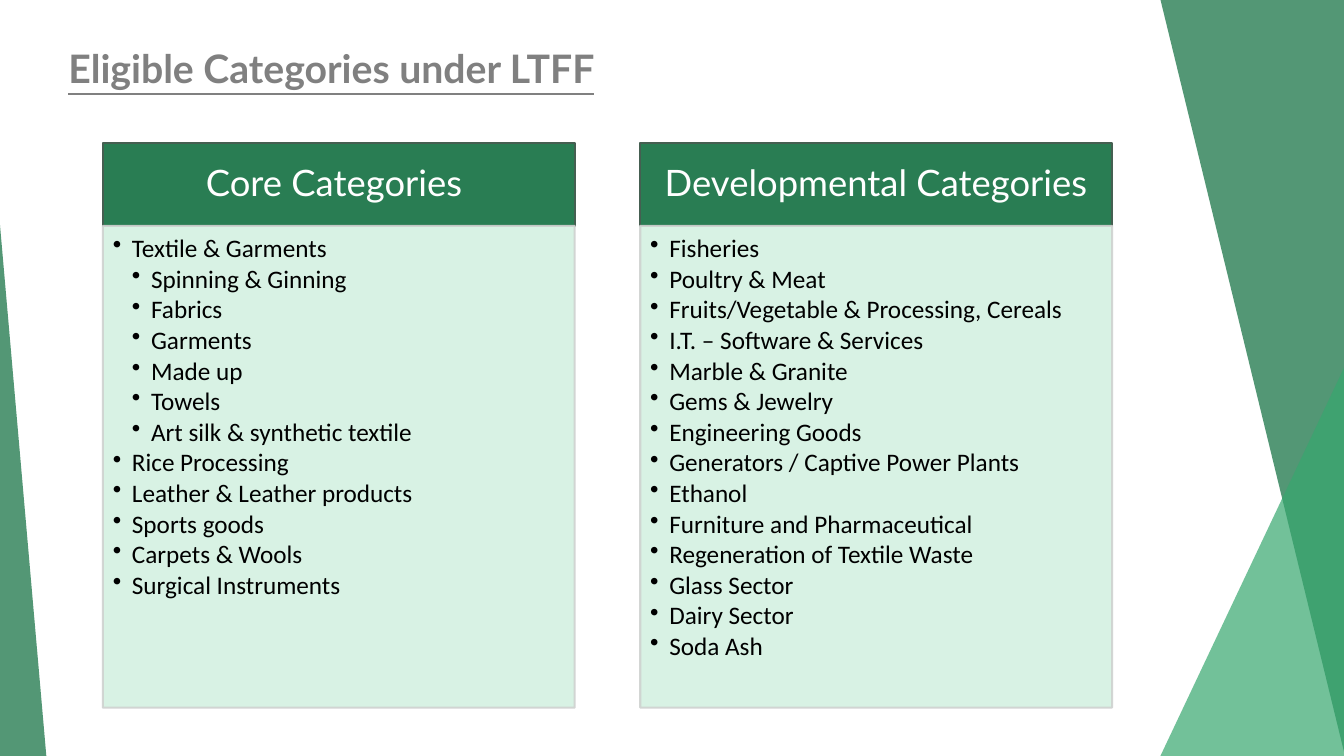
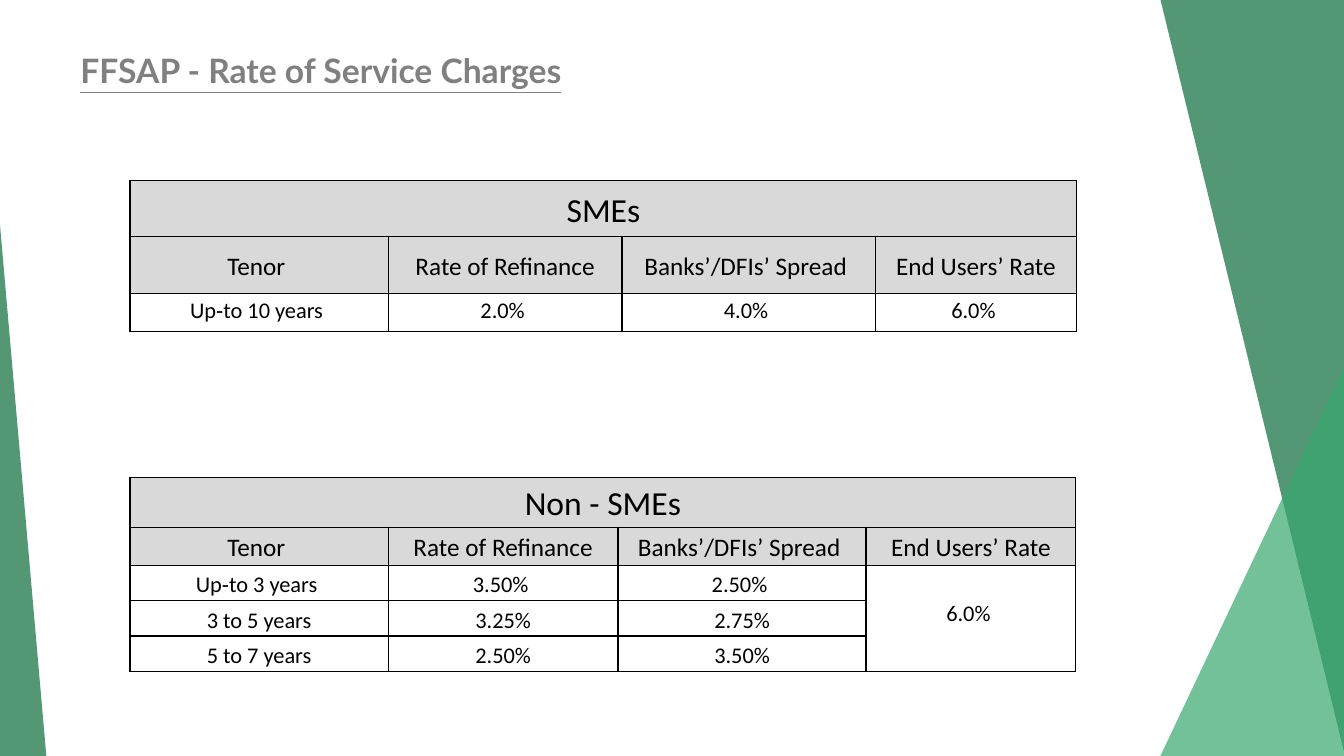
from lxml import etree
from pptx import Presentation
from pptx.dml.color import RGBColor
from pptx.enum.shapes import MSO_SHAPE
from pptx.enum.text import MSO_ANCHOR, PP_ALIGN
from pptx.oxml.ns import qn
from pptx.util import Inches, Pt

RECTANGLE = MSO_SHAPE.RECTANGLE
RIGHT_TRIANGLE = MSO_SHAPE.RIGHT_TRIANGLE
TOP, MIDDLE = MSO_ANCHOR.TOP, MSO_ANCHOR.MIDDLE
LEFT, CENTER = PP_ALIGN.LEFT, PP_ALIGN.CENTER

WIDTH, HEIGHT = 13.33, 7.5
DARK_GREEN, MID_GREEN, PALE_GREEN = "297D53", "37A76F", "D4F1E2"
HEADER_LINE, BODY_LINE = "455F51", "CFD2D0"
GREY, HEADING_FILL, BLACK, WHITE = "808080", "D9D9D9", "000000", "FFFFFF"
HEADING_FONT, BODY_FONT = "Lato", "Calibri"

CORE = [
    ("Textile & Garments", 1),
    ("Spinning & Ginning", 2),
    ("Fabrics", 2),
    ("Garments", 2),
    ("Made up", 2),
    ("Towels", 2),
    ("Art silk & synthetic textile", 2),
    ("Rice Processing", 1),
    ("Leather & Leather products", 1),
    ("Sports goods", 1),
    ("Carpets & Wools", 1),
    ("Surgical Instruments", 1),
]
DEVELOPMENTAL = [(name, 1) for name in (
    "Fisheries", "Poultry & Meat", "Fruits/Vegetable & Processing, Cereals",
    "I.T. – Software & Services", "Marble & Granite", "Gems & Jewelry",
    "Engineering Goods", "Generators / Captive Power Plants", "Ethanol",
    "Furniture and Pharmaceutical", "Regeneration of Textile Waste",
    "Glass Sector", "Dairy Sector", "Soda Ash",
)]
RATE_HEADINGS = ["Tenor ", "Rate of Refinance", "Banks’/DFIs’ Spread ", "End Users’ Rate"]
SME_RATES = [["Up‐to 10 years ", "2.0% ", "4.0% ", "6.0% "]]
NON_SME_RATES = [
    ["Up‐to 3 years ", "3.50% ", "2.50% ", "6.0% "],
    ["3 to 5 years", "3.25%", "2.75%", ""],
    ["5 to 7 years", "2.50%", "3.50%", ""],
]


def color(hex_value):
    return RGBColor.from_string(hex_value)


def paint(fill, hex_value):
    fill.solid()
    fill.fore_color.rgb = color(hex_value)


def set_opacity(parent, percent):
    value = parent.find(qn("a:solidFill")).find(qn("a:srgbClr"))
    etree.SubElement(value, qn("a:alpha")).set("val", str(percent * 1000))


def set_margins(target, left, top, right, bottom):
    target.margin_left, target.margin_top = Inches(left), Inches(top)
    target.margin_right, target.margin_bottom = Inches(right), Inches(bottom)


def style(paragraph, size, font, hex_value, align=LEFT, spacing=1.0):
    paragraph.alignment = align
    paragraph.line_spacing = spacing
    for run in paragraph.runs:
        run.font.size = Pt(size)
        run.font.name = font
        run.font.color.rgb = color(hex_value)


def add_box(slide, kind, box, fill, opacity=100, line=None):
    shape = slide.shapes.add_shape(kind, *map(Inches, box))
    shape.shadow.inherit = False
    paint(shape.fill, fill)
    if opacity < 100:
        set_opacity(shape.element.spPr, opacity)
    if line:
        shape.line.color.rgb = color(line)
        shape.line.width = Pt(1.5)
        if opacity < 100:
            set_opacity(shape.element.spPr.find(qn("a:ln")), opacity)
    else:
        shape.line.fill.background()
    return shape


def add_side_triangles(slide, layout):
    left, width = 11.51, 1.83
    upper = add_box(slide, RIGHT_TRIANGLE, (left, 0, width, HEIGHT), DARK_GREEN, 80)
    upper.rotation = 180
    lower = add_box(slide, RIGHT_TRIANGLE, (left, 3.63, width, 3.87), MID_GREEN, 70)
    lower.element.spPr.get_or_add_xfrm().set("flipH", "1")
    edge = add_box(slide, RIGHT_TRIANGLE, (0, 2.23, 0.46, 5.27), DARK_GREEN, 80)
    for triangle in (upper, lower, edge):
        layout.shapes.element.append(triangle.element)


def add_title(slide, text, box, size):
    frame = slide.shapes.add_textbox(*map(Inches, box)).text_frame
    frame.word_wrap = True
    frame.text = text
    paragraph = frame.paragraphs[0]
    style(paragraph, size, HEADING_FONT, GREY)
    paragraph.runs[0].font.bold = True
    paragraph.runs[0].font.underline = True


def add_bullet(paragraph, level):
    indent = Inches(0.19)
    properties = paragraph._p.get_or_add_pPr()
    properties.set("marL", str(indent * level))
    properties.set("indent", str(-indent))
    etree.SubElement(properties, qn("a:buChar")).set("char", "•")


def add_category_panel(slide, box, heading, items):
    left, top, width, height = box
    header_height = 0.82
    header = add_box(slide, RECTANGLE, (left, top, width, header_height),
                     DARK_GREEN, line=HEADER_LINE)
    frame = header.text_frame
    frame.word_wrap = True
    set_margins(frame, 0.2, 0.12, 0.2, 0.12)
    frame.text = heading
    style(frame.paragraphs[0], 26, HEADING_FONT, WHITE, CENTER, 0.9)

    body = add_box(slide, RECTANGLE,
                   (left, top + header_height, width, height - header_height),
                   PALE_GREEN, 90, BODY_LINE)
    frame = body.text_frame
    frame.word_wrap = True
    frame.vertical_anchor = TOP
    set_margins(frame, 0.1, 0.1, 0.14, 0.16)
    frame.text = "\n".join(name for name, level in items)
    for paragraph, (name, level) in zip(frame.paragraphs, items):
        style(paragraph, 18, BODY_FONT, BLACK, LEFT, 0.9)
        paragraph.space_after = Pt(2.4)
        add_bullet(paragraph, level)


def add_borders(cell):
    properties = cell._tc.get_or_add_tcPr()
    for side in ("a:lnL", "a:lnR", "a:lnT", "a:lnB"):
        line = etree.SubElement(properties, qn(side), w=str(Pt(1)))
        fill = etree.SubElement(line, qn("a:solidFill"))
        etree.SubElement(fill, qn("a:srgbClr"), val=BLACK)


def format_cell(cell, size, is_heading, spacing):
    add_borders(cell)
    set_margins(cell, 0.08, 0.04, 0.08, 0)
    if is_heading:
        cell.vertical_anchor = MIDDLE
        paint(cell.fill, HEADING_FILL)
    else:
        cell.vertical_anchor = TOP
        cell.fill.background()
    style(cell.text_frame.paragraphs[0], size, BODY_FONT, BLACK, CENTER, spacing)


def add_rate_table(slide, left, top, widths, heights, heading, rates, spacing=1.0):
    rows = [[heading, "", "", ""], RATE_HEADINGS] + rates
    table = slide.shapes.add_table(
        len(rows), len(widths), Inches(left), Inches(top),
        Inches(sum(widths)), Inches(sum(heights))).table
    table.first_row = False
    table.horz_banding = False
    for column, width in zip(table.columns, widths):
        column.width = Inches(width)
    for row, height in zip(table.rows, heights):
        row.height = Inches(height)
    for row_index, values in enumerate(rows):
        is_heading = row_index < 2
        size = (24, 18)[row_index] if is_heading else 16
        for column_index, value in enumerate(values):
            cell = table.cell(row_index, column_index)
            cell.text = value
            format_cell(cell, size, is_heading, 1.0 if is_heading else spacing)
    table.cell(0, 0).merge(table.cell(0, len(widths) - 1))
    return table


def build_categories(slide):
    add_title(slide, "Eligible Categories under LTFF", (0.58, 0.39, 8.86, 0.57), 28)
    panels = [("Core Categories ", CORE), ("Developmental Categories ", DEVELOPMENTAL)]
    left, width, gap = 1.02, 4.68, 0.65
    for index, (heading, items) in enumerate(panels):
        box = (left + index * (width + gap), 1.42, width, 5.6)
        add_category_panel(slide, box, heading, items)


def build_rates(slide):
    add_title(slide, "FFSAP - Rate of Service Charges", (0.7, 0.45, 5.64, 0.5), 24)
    left = 1.29
    add_rate_table(slide, left, 1.79, [2.56, 2.32, 2.51, 2],
                   [0.56, 0.56, 0.38], "SMEs", SME_RATES)
    table = add_rate_table(slide, left, 4.74, [2.56, 2.28, 2.46, 2.08],
                           [0.49, 0.38] + [0.35] * 3, "Non - SMEs",
                           NON_SME_RATES, 1.07)
    shared_rate = table.cell(2, 3)
    shared_rate.merge(table.cell(4, 3))
    shared_rate.margin_top = Inches(0.33)


def main():
    presentation = Presentation()
    presentation.slide_width = Inches(WIDTH)
    presentation.slide_height = Inches(HEIGHT)
    layout = presentation.slide_layouts[6]
    categories = presentation.slides.add_slide(layout)
    add_side_triangles(categories, layout)
    build_categories(categories)
    build_rates(presentation.slides.add_slide(layout))
    presentation.save("out.pptx")


if __name__ == "__main__":
    main()
